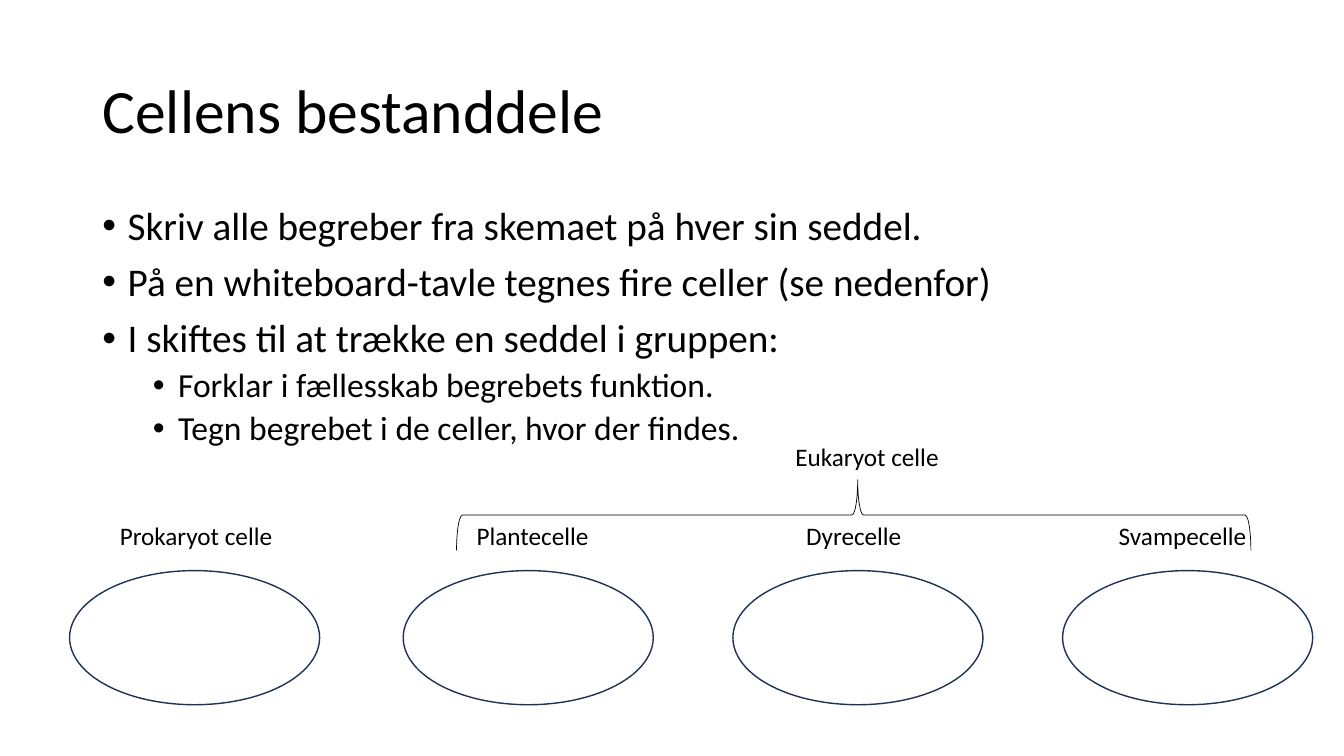
from dataclasses import dataclass

from lxml.etree import SubElement
from pptx import Presentation
from pptx.dml.color import RGBColor as Rgb
from pptx.enum.shapes import MSO_SHAPE as Shape
from pptx.enum.text import MSO_ANCHOR as Anchor, MSO_AUTO_SIZE as Fit, PP_ALIGN as Align
from pptx.oxml.ns import qn
from pptx.util import Pt


@dataclass(frozen=True)
class Theme:
    font: str = "Calibri"
    ink: Rgb = Rgb(0, 0, 0)
    rim: Rgb = Rgb(0x1E, 0x32, 0x56)
    title: int = 44
    levels: tuple = (28, 24)
    label: int = 18


class Board:
    def __init__(self, slide, theme):
        self.slide = slide
        self.theme = theme

    def place(self, item, box):
        item.left, item.top, item.width, item.height = map(Pt, box)

    def style(self, para, size):
        para.alignment = Align.LEFT
        para.font.name = self.theme.font
        para.font.size = Pt(size)
        para.font.color.rgb = self.theme.ink

    def title(self, text, box):
        item = self.slide.shapes.title
        self.place(item, box)
        frame = item.text_frame
        frame.text = text
        frame.auto_size = Fit.NONE
        frame.vertical_anchor = Anchor.MIDDLE
        para = frame.paragraphs[0]
        para.line_spacing = 0.9
        self.style(para, self.theme.title)

    def bullets(self, rows, box):
        item = self.slide.placeholders[1]
        self.place(item, box)
        frame = item.text_frame
        frame.text = "\n".join(text for _, text in rows)
        frame.auto_size = Fit.NONE
        for i, (para, (level, _)) in enumerate(zip(frame.paragraphs, rows)):
            para.level = level
            para.line_spacing = 0.9
            para.space_before = Pt((10, 5)[level] if i else 0)
            props = para._p.get_or_add_pPr()
            props.set("marL", str(Pt(18 + 36 * level)))
            props.set("indent", str(Pt(-18)))
            SubElement(props, qn("a:buFont"), typeface="Arial")
            SubElement(props, qn("a:buChar"), char="•")
            self.style(para, self.theme.levels[level])

    def shape(self, kind, box, color, weight):
        item = self.slide.shapes.add_shape(kind, *map(Pt, box))
        item.shadow.inherit = False
        item.fill.background()
        item.line.color.rgb = color
        item.line.width = Pt(weight)
        return item

    def brace(self, box):
        item = self.shape(Shape.RIGHT_BRACE, box, self.theme.ink, 0.5)
        item.rotation = 270
        item.adjustments[0] = 0.083
        item.adjustments[1] = 0.505

    def label(self, text, box):
        frame = self.slide.shapes.add_textbox(*map(Pt, box)).text_frame
        frame.word_wrap = True
        frame.auto_size = Fit.SHAPE_TO_FIT_TEXT
        frame.text = text
        self.style(frame.paragraphs[0], self.theme.label)


def main():
    deck = Presentation()
    deck.slide_width, deck.slide_height = Pt(960), Pt(540)
    theme = Theme()
    board = Board(deck.slides.add_slide(deck.slide_layouts[1]), theme)

    # Title and instructions
    board.title("Cellens bestanddele", (66, 28.75, 828, 104.4))
    board.bullets([
        (0, "Skriv alle begreber fra skemaet på hver sin seddel."),
        (0, "På en whiteboard-tavle tegnes fire celler (se nedenfor)"),
        (0, "I skiftes til at trække en seddel i gruppen:"),
        (1, "Forklar i fællesskab begrebets funktion."),
        (1, "Tegn begrebet i de celler, hvor der findes."),
    ], (66, 143.75, 828, 342.6))

    # Four cells: name, left of cell, left of name
    cells = [
        ("Prokaryot celle", 49.7, 78.5),
        ("Plantecelle", 288, 333.4),
        ("Dyrecelle", 523.5, 568.8),
        ("Svampecelle", 759, 792),
    ]
    for name, left, start in cells:
        board.shape(Shape.OVAL, (left, 407.6, 178.6, 95.8), theme.rim, 1)
        board.label(name, (start, 368, 150, 29))

    # Brace over the eukaryotic cells
    board.brace((584.6, 84.2, 50.4, 567.4))
    board.label("Eukaryot celle", (561, 311.8, 133.2, 29))

    deck.save("out.pptx")


if __name__ == "__main__":
    main()
